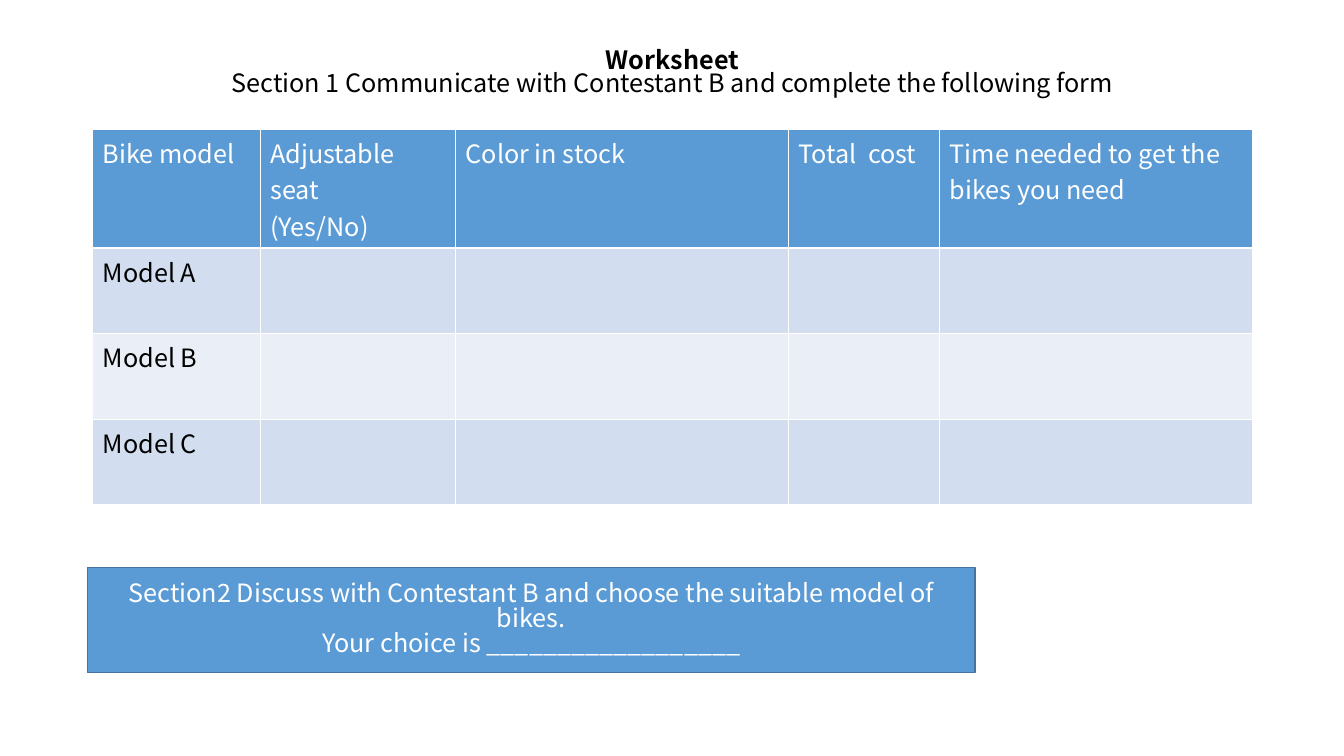
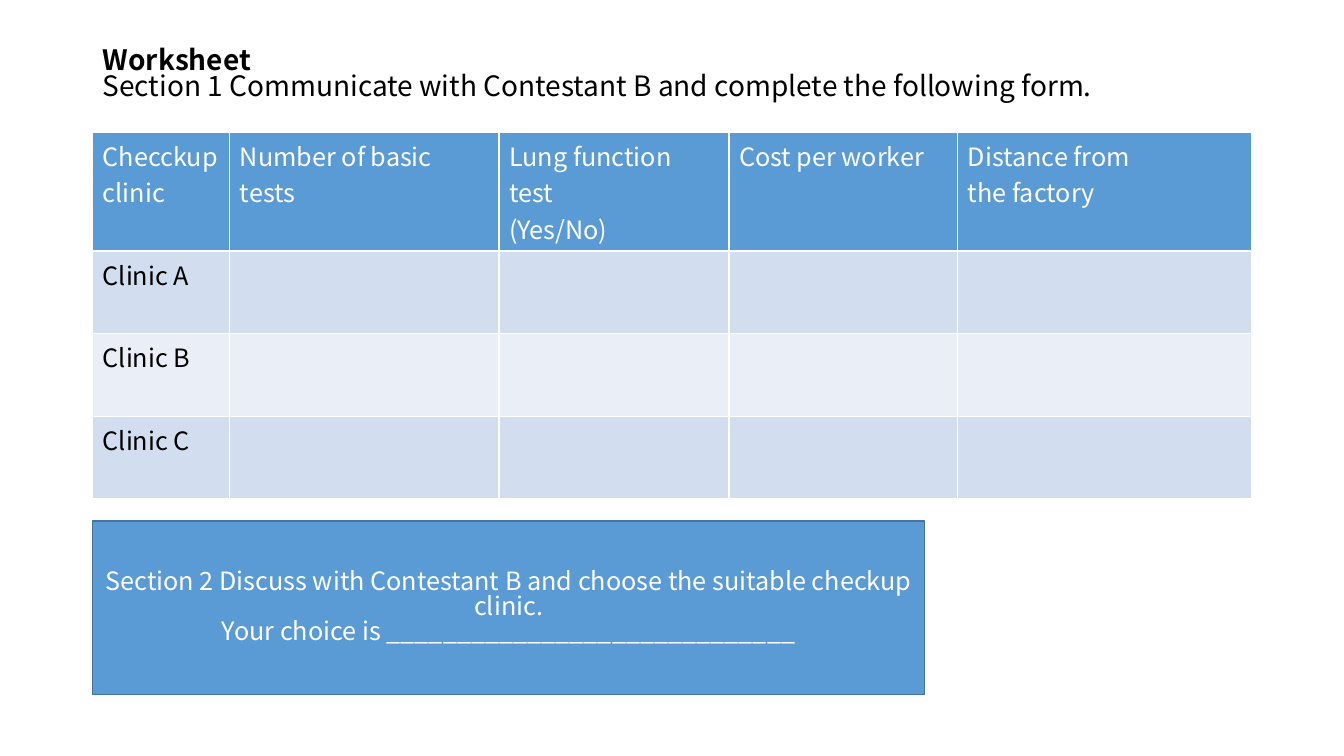
from lxml import etree
from pptx import Presentation
from pptx.dml.color import RGBColor
from pptx.enum.shapes import MSO_SHAPE as SHAPE
from pptx.enum.text import MSO_ANCHOR as ANCHOR, PP_ALIGN as ALIGN
from pptx.oxml.ns import qn
from pptx.util import Inches, Pt

FONT = "Noto Sans CJK SC"
WHITE = RGBColor(0xFF, 0xFF, 0xFF)
BLACK = RGBColor(0x00, 0x00, 0x00)
BLUE = RGBColor(0x5B, 0x9B, 0xD5)
BLUE_EDGE = RGBColor(0x43, 0x73, 0x9E)
BANDS = (RGBColor(0xD2, 0xDE, 0xEF), RGBColor(0xEA, 0xEF, 0xF7))

LEFT, WIDTH = 0.92, 11.5
HEADER_HEIGHT = 1.18
BODY_SIZE = 18


class Worksheet:
    """Holds the shared style and the slide being built."""

    def __init__(self, prs):
        self.prs = prs
        self.s = None

    def new_slide(self):
        self.s = self.prs.slides.add_slide(self.prs.slide_layouts[6])

    def put_text(self, tf, lines, color, size=BODY_SIZE, bold_first=False, **para):
        """Fill a text frame, one paragraph a line, with paragraph formats."""
        tf.word_wrap = True
        for i, line in enumerate(lines):
            p = tf.paragraphs[0] if i == 0 else tf.add_paragraph()
            for name, value in para.items():
                setattr(p, name, value)
            r = p.add_run()
            r.text = line
            fmt = {"name": FONT, "size": Pt(size), "bold": bold_first and i == 0}
            for name, value in fmt.items():
                setattr(r.font, name, value)
            r.font.color.rgb = color

    def title(self, instruction, height, size, align):
        box = self.s.shapes.add_textbox(
            Inches(LEFT), Inches(0.4), Inches(WIDTH), Inches(height))
        tf = box.text_frame
        tf.vertical_anchor = ANCHOR.MIDDLE
        self.put_text(tf, ["Worksheet", instruction], BLACK, size, bold_first=True,
                      alignment=align, line_spacing=0.76)

    def border(self, cell):
        """Draw a thin white line on all four sides of a cell."""
        tc_pr = cell._tc.get_or_add_tcPr()
        for i, side in enumerate(("a:lnL", "a:lnR", "a:lnT", "a:lnB")):
            ln = etree.Element(qn(side), w=str(Pt(1)))
            fill = etree.SubElement(ln, qn("a:solidFill"))
            etree.SubElement(fill, qn("a:srgbClr"), val=str(WHITE))
            tc_pr.insert(i, ln)

    def form(self, top, widths, row_height, headers, names):
        """Add a table with a header row and one empty row for each name."""
        rows = [headers] + [[name] + [""] * (len(headers) - 1) for name in names]
        heights = [HEADER_HEIGHT] + [row_height] * len(names)
        table = self.s.shapes.add_table(
            len(rows), len(headers), Inches(LEFT), Inches(top),
            Inches(WIDTH), Inches(sum(heights))).table
        for col, width in zip(table.columns, widths):
            col.width = Inches(width)
        for i, (texts, height) in enumerate(zip(rows, heights)):
            table.rows[i].height = Inches(height)
            for j, text in enumerate(texts):
                cell = table.cell(i, j)
                cell.fill.solid()
                cell.fill.fore_color.rgb = BANDS[(i - 1) % 2] if i else BLUE
                self.border(cell)
                if text:
                    self.put_text(cell.text_frame, text.split("\n"),
                                  BLACK if i else WHITE)

    def choice(self, left, top, width, height, lines):
        box = self.s.shapes.add_shape(
            SHAPE.RECTANGLE, Inches(left), Inches(top), Inches(width), Inches(height))
        box.shadow.inherit = False
        box.fill.solid()
        box.fill.fore_color.rgb = BLUE
        box.line.color.rgb = BLUE_EDGE
        box.line.width = Pt(1)
        tf = box.text_frame
        tf.vertical_anchor = ANCHOR.MIDDLE
        self.put_text(tf, lines, WHITE, alignment=ALIGN.CENTER, line_spacing=0.82)


def main():
    prs = Presentation()
    prs.slide_width, prs.slide_height = Inches(13.33), Inches(7.5)
    sheet = Worksheet(prs)

    sheet.new_slide()
    sheet.title("Section 1 Communicate with Contestant B and complete the following form",
                0.67, 18, ALIGN.CENTER)
    sheet.form(1.28, (1.66, 1.94, 3.3, 1.5, 3.1), 0.85,
               ["Bike model", "Adjustable seat\n(Yes/No)", "Color in stock",
                "Total  cost", "Time needed to get the bikes you need"],
               ["Model A", "Model B", "Model C"])
    sheet.choice(0.87, 5.63, 8.8, 1.04,
                 ["Section2 Discuss with Contestant B and choose the suitable model of bikes.",
                  "Your choice is " + "_" * 18])

    sheet.new_slide()
    sheet.title("Section 1 Communicate with Contestant B and complete the following form.",
                0.71, 20, ALIGN.LEFT)
    sheet.form(1.31, (1.36, 2.67, 2.28, 2.27, 2.91), 0.82,
               ["Checckup clinic", "Number of basic tests",
                "Lung function test\n(Yes/No)", "Cost per worker",
                "Distance from\nthe factory"],
               ["Clinic A", "Clinic B", "Clinic C"])
    sheet.choice(LEFT, 5.17, 8.25, 1.72,
                 ["Section 2 Discuss with Contestant B and choose the suitable checkup clinic.",
                  "Your choice is " + "_" * 29])

    prs.save("out.pptx")


if __name__ == "__main__":
    main()
